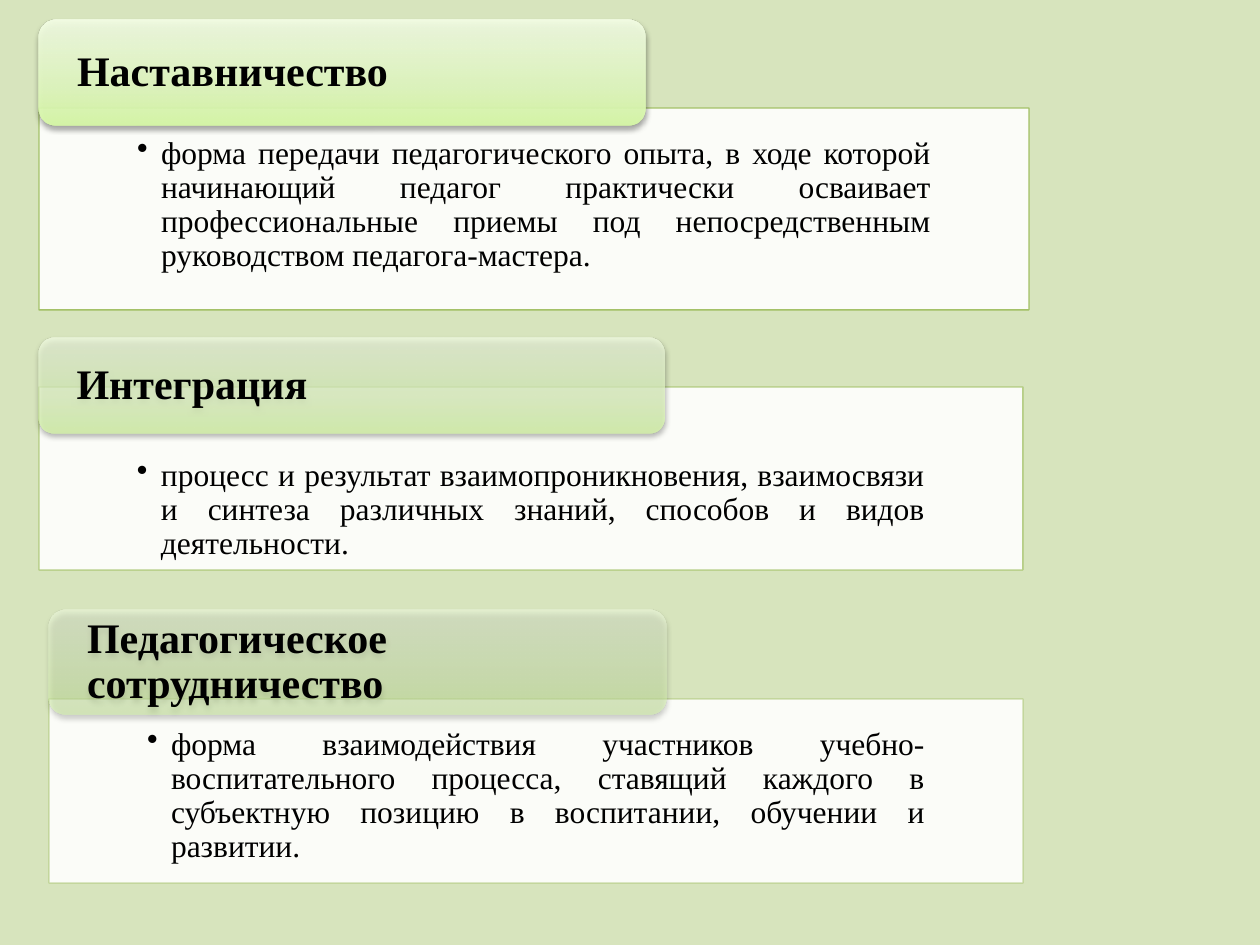
"""Build a slide of three teaching terms, each a tab heading over a definition panel."""
from dataclasses import dataclass

from lxml.etree import SubElement
from pptx import Presentation
from pptx.dml.color import RGBColor
from pptx.enum.shapes import MSO_SHAPE as Shape
from pptx.enum.text import MSO_ANCHOR as Anchor, PP_ALIGN as Align
from pptx.oxml import parse_xml
from pptx.oxml.ns import nsdecls, qn
from pptx.util import Emu, Pt

TERMS = [
    dict(
        heading="Наставничество",
        definition="форма передачи педагогического опыта, в ходе которой начинающий педагог "
                   "практически осваивает профессиональные приемы под непосредственным "
                   "руководством педагога-мастера.",
        tab=(39, 20, 607, 106), panel=(39, 108, 990, 202), text_top=29, opacity=90,
    ),
    dict(
        heading="Интеграция",
        definition="процесс и результат взаимопроникновения, взаимосвязи и синтеза различных "
                   "знаний, способов и видов деятельности.",
        tab=(39, 338, 626, 95), panel=(39, 387, 984, 183), text_top=72, opacity=70,
    ),
    dict(
        heading="Педагогическое сотрудничество",
        definition="форма взаимодействия участников учебно-воспитательного процесса, ставящий "
                   "каждого в субъектную позицию в воспитании, обучении и развитии.",
        tab=(49, 610, 617, 105), panel=(49, 699, 974, 184), text_top=29, opacity=50,
    ),
]


@dataclass(frozen=True)
class Theme:
    font: str = "Times New Roman"
    background: str = "D7E4BD"
    panel: str = "FFFFFF"
    border: str = "9BBB59"
    text: str = "000000"
    shadow: str = "000000"
    tab_stops: tuple = ((0, "DAFDA7"), (35, "E4FCC2"), (100, "F5FFE7"))
    heading_size: int = 24
    definition_size: int = 18
    panel_opacity: int = 90
    shadow_opacity: int = 38


THEME = Theme()
SLIDE_SIZE = (1260, 945)
PANEL_SIDE, PANEL_BOTTOM, TAB_SIDE, BULLET_INDENT = 98, 18, 33, 24


def px(length):
    return Emu(round(length * 914400 / 126))


def rgb(color):
    return RGBColor.from_string(color)


def set_opacity(parent, percent):
    for color in parent.iter(qn("a:srgbClr")):
        SubElement(color, qn("a:alpha"), val=str(percent * 1000))


def add_block(slide, kind, bounds, insets, anchor):
    block = slide.shapes.add_shape(kind, *map(px, bounds))
    block.shadow.inherit = False
    frame = block.text_frame
    frame.word_wrap = True
    frame.vertical_anchor = anchor
    frame.margin_left, frame.margin_top, frame.margin_right, frame.margin_bottom = map(px, insets)
    return block


def write(paragraph, words, size, align, bold=False):
    paragraph.alignment = align
    paragraph.line_spacing = 0.9
    run = paragraph.add_run()
    run.text = words
    run.font.name = THEME.font
    run.font.size = Pt(size)
    run.font.bold = bold
    run.font.color.rgb = rgb(THEME.text)


def add_panel(slide, term):
    insets = (PANEL_SIDE, term["text_top"], PANEL_SIDE, PANEL_BOTTOM)
    panel = add_block(slide, Shape.RECTANGLE, term["panel"], insets, Anchor.TOP)
    panel.fill.solid()
    panel.fill.fore_color.rgb = rgb(THEME.panel)
    set_opacity(panel.element.spPr, THEME.panel_opacity)
    panel.line.color.rgb = rgb(THEME.border)
    panel.line.width = Pt(0.75)
    set_opacity(panel.element.spPr.find(qn("a:ln")), term["opacity"])

    paragraph = panel.text_frame.paragraphs[0]
    paragraph.level = 1
    write(paragraph, term["definition"], THEME.definition_size, Align.JUSTIFY)
    properties = paragraph._p.get_or_add_pPr()
    properties.set("marL", str(px(BULLET_INDENT)))
    properties.set("indent", str(-px(BULLET_INDENT)))
    SubElement(properties, qn("a:buChar"), char="•")


def add_tab(slide, term):
    insets = (TAB_SIDE, 0, TAB_SIDE, 0)
    tab = add_block(slide, Shape.ROUNDED_RECTANGLE, term["tab"], insets, Anchor.MIDDLE)
    tab.line.fill.background()
    stops = "".join(
        f'<a:gs pos="{position * 1000}"><a:srgbClr val="{color}"/></a:gs>'
        for position, color in THEME.tab_stops
    )
    gradient = parse_xml(
        f'<a:gradFill {nsdecls("a")} rotWithShape="1"><a:gsLst>{stops}</a:gsLst>'
        '<a:lin ang="16200000" scaled="1"/></a:gradFill>'
    )
    set_opacity(gradient, term["opacity"])
    properties = tab.element.spPr
    properties.find(qn("a:prstGeom")).addnext(gradient)
    shadow = SubElement(
        properties.find(qn("a:effectLst")), qn("a:outerShdw"),
        blurRad=str(Pt(3.1)), dist=str(Pt(1.6)), dir="5400000", rotWithShape="0",
    )
    SubElement(shadow, qn("a:srgbClr"), val=THEME.shadow)
    set_opacity(shadow, THEME.shadow_opacity)
    write(tab.text_frame.paragraphs[0], term["heading"], THEME.heading_size, Align.LEFT, bold=True)


def main():
    deck = Presentation()
    deck.slide_width, deck.slide_height = map(px, SLIDE_SIZE)
    slide = deck.slides.add_slide(deck.slide_layouts[6])
    slide.background.fill.solid()
    slide.background.fill.fore_color.rgb = rgb(THEME.background)
    for term in TERMS:
        add_panel(slide, term)
        add_tab(slide, term)
    deck.save("out.pptx")


if __name__ == "__main__":
    main()
